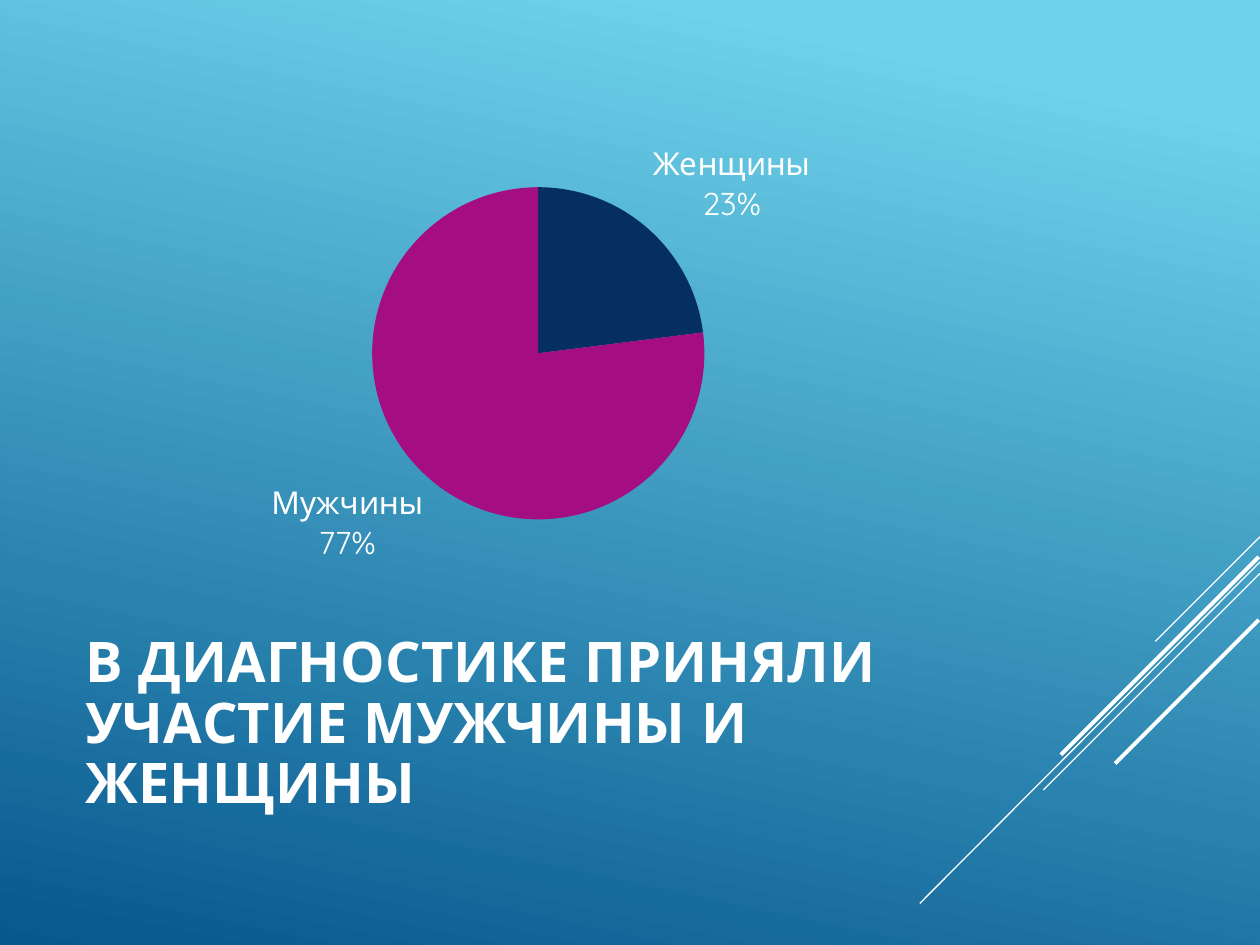
from lxml import etree
from pptx import Presentation
from pptx.chart.data import CategoryChartData
from pptx.dml.color import RGBColor
from pptx.enum.chart import XL_CHART_TYPE, XL_LABEL_POSITION
from pptx.enum.shapes import MSO_CONNECTOR
from pptx.enum.text import MSO_ANCHOR, PP_ALIGN
from pptx.oxml import parse_xml
from pptx.oxml.ns import nsdecls, qn
from pptx.util import Inches, Pt

PIE = XL_CHART_TYPE.PIE
OUTSIDE = XL_LABEL_POSITION.OUTSIDE_END
STRAIGHT = MSO_CONNECTOR.STRAIGHT
MIDDLE = MSO_ANCHOR.MIDDLE
LEFT = PP_ALIGN.LEFT

FONT = "Quicksand"
COLORS = {
    "sky": "6ED2EB",
    "deep": "06588E",
    "white": "FFFFFF",
    "women": "052F61",
    "men": "A50E82",
}


def rgb(name):
    return RGBColor.from_string(COLORS[name])


def style_font(font, size, bold=False):
    font.name = FONT
    font.size = Pt(size)
    font.bold = bold
    font.color.rgb = rgb("white")


def paint_background(slide):
    fill = slide.background.fill
    fill.gradient()
    fill.gradient_angle = 360 - 102  # python-pptx counts counter-clockwise
    for stop, (position, color) in zip(fill.gradient_stops, [(0.1, "sky"), (1, "deep")]):
        stop.position = position
        stop.color.rgb = rgb(color)


def add_diagonals(slide, right):
    """Draw the slanted strokes that run down and left from the right edge."""
    strokes = [  # gap to the edge, top, width, height, weight
        (0, 4.26, 0.83, 0.83, 0.75),
        (0, 4.46, 2.7, 2.71, 0.75),
        (0, 4.55, 1.72, 1.72, 0.75),
        (0.01, 4.42, 1.57, 1.57, 2.25),
        (0.01, 4.92, 1.14, 1.14, 2.25),
    ]
    for gap, top, width, height, weight in strokes:
        start = right - gap
        stroke = slide.shapes.add_connector(
            STRAIGHT, Inches(start), Inches(top),
            Inches(start - width), Inches(top + height))
        stroke.line.color.rgb = rgb("white")
        stroke.line.width = Pt(weight)
        etree.SubElement(stroke._element.spPr, qn("a:effectLst"))


def place_title(slide, left, top, width, height):
    title = slide.shapes.title
    title.left, title.top = Inches(left), Inches(top)
    title.width, title.height = Inches(width), Inches(height)
    frame = title.text_frame
    frame.text = "В ДИАГНОСТИКЕ ПРИНЯЛИ УЧАСТИЕ МУЖЧИНЫ И ЖЕНЩИНЫ"
    frame.word_wrap = True
    frame.vertical_anchor = MIDDLE
    paragraph = frame.paragraphs[0]
    paragraph.alignment = LEFT
    paragraph.line_spacing = 0.9
    style_font(paragraph.runs[0].font, 32, bold=True)


def fix_plot_area(chart, x, y, width, height):
    """Pin the pie inside the chart, in fractions of the chart's box."""
    plot_area = chart._chartSpace.chart.plotArea
    for layout in plot_area.findall(qn("c:layout")):
        plot_area.remove(layout)
    plot_area.insert(0, parse_xml(
        f'<c:layout {nsdecls("c")}><c:manualLayout><c:layoutTarget val="inner"/>'
        '<c:xMode val="edge"/><c:yMode val="edge"/>'
        f'<c:x val="{x}"/><c:y val="{y}"/><c:w val="{width}"/><c:h val="{height}"/>'
        '</c:manualLayout></c:layout>'))


def add_gender_pie(slide, left, top, width, height):
    shares = CategoryChartData()
    shares.categories = ["Женщины", "Мужчины"]
    shares.add_series("Series 1", (23, 77))
    chart = slide.shapes.add_chart(
        PIE, Inches(left), Inches(top), Inches(width), Inches(height), shares).chart
    chart.has_title = False
    chart.has_legend = False
    style_font(chart.font, 18)
    fix_plot_area(chart, 0.33, 0.22, 0.37, 0.64)

    plot = chart.plots[0]
    plot.vary_by_categories = True
    for index, color in enumerate(["women", "men"]):
        fill = plot.series[0].points[index].format.fill
        fill.solid()
        fill.fore_color.rgb = rgb(color)

    plot.has_data_labels = True
    labels = plot.data_labels
    labels.show_category_name = True
    labels.show_percentage = True
    labels.show_value = False
    labels.number_format = "0%"
    labels.number_format_is_linked = False
    labels.position = OUTSIDE
    style_font(labels.font, 18)
    show_bubble_size = labels._element.find(qn("c:showBubbleSize"))
    separator = parse_xml(f'<c:separator {nsdecls("c")}>\n</c:separator>')
    show_bubble_size.addnext(separator)


def main():
    prs = Presentation()
    prs.slide_width, prs.slide_height = Inches(10), Inches(7.5)
    slide = prs.slides.add_slide(prs.slide_layouts[5])
    paint_background(slide)
    add_diagonals(slide, right=10)
    place_title(slide, 0.58, 4.92, 7.17, 1.67)
    add_gender_pie(slide, 0.58, 0.58, 7.17, 4.12)
    prs.save("out.pptx")


if __name__ == "__main__":
    main()
